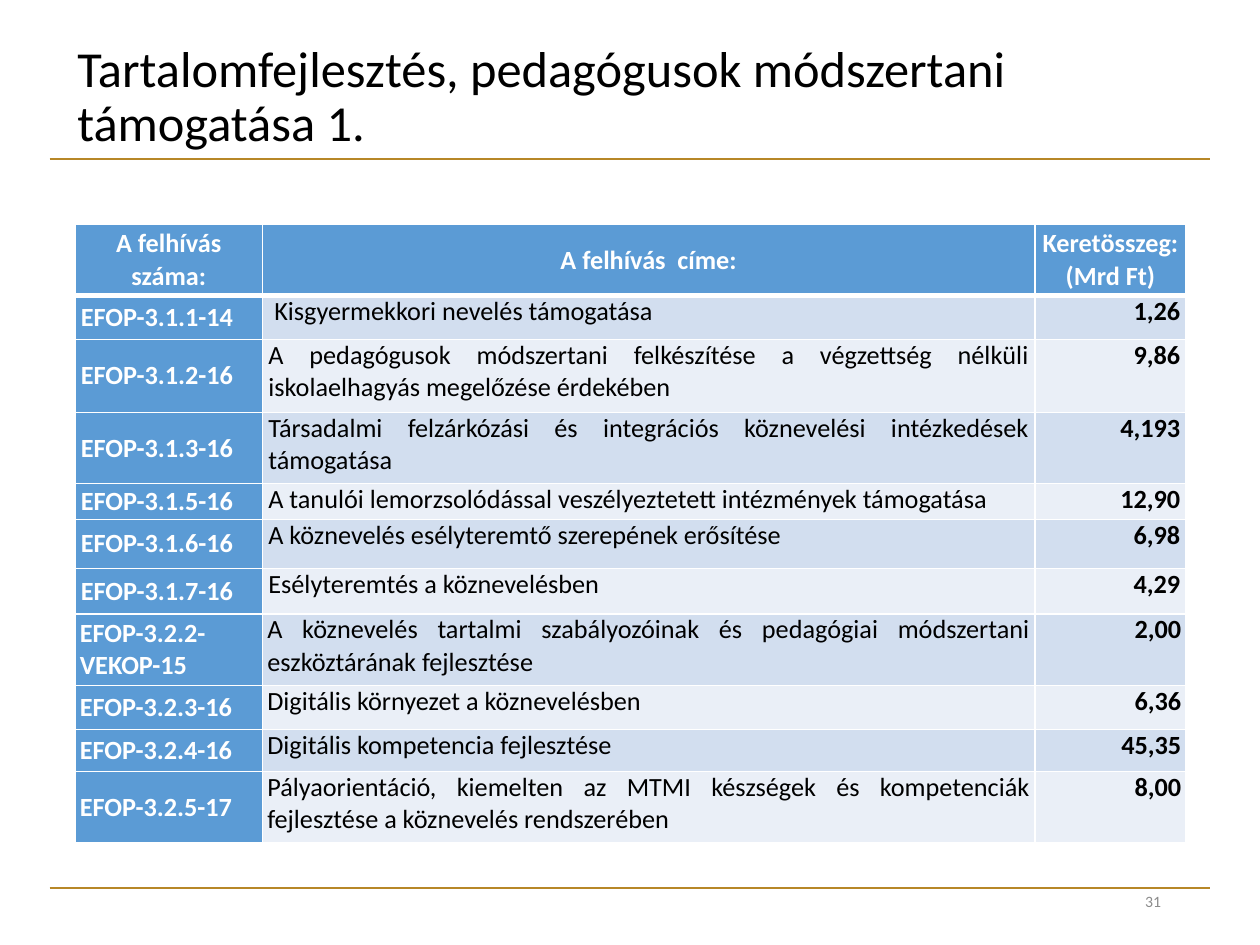
from dataclasses import dataclass

from lxml import etree
from pptx import Presentation
from pptx.dml.color import RGBColor
from pptx.enum.shapes import MSO_CONNECTOR
from pptx.enum.text import MSO_ANCHOR, MSO_AUTO_SIZE, PP_ALIGN
from pptx.oxml.ns import qn
from pptx.util import Pt

LEFT, CENTER, RIGHT, JUSTIFY = PP_ALIGN.LEFT, PP_ALIGN.CENTER, PP_ALIGN.RIGHT, PP_ALIGN.JUSTIFY
TOP, MIDDLE = MSO_ANCHOR.TOP, MSO_ANCHOR.MIDDLE


@dataclass(frozen=True)
class Theme:
    font: str = "Calibri"
    title_size: float = 28.8
    table_size: float = 15
    number_size: float = 9
    black: str = "000000"
    white: str = "FFFFFF"
    gray: str = "8C8C8C"
    gold: str = "B78727"
    blue: str = "5B9BD5"
    bands: tuple = ("D2DEEF", "EAEFF7")


THEME = Theme()

HEADINGS = ("A felhívás száma:", "A felhívás  címe:", "Keretösszeg:\v(Mrd Ft)")
# Call number, call title, budget, row height
CALLS = (
    ("EFOP-3.1.1-14", " Kisgyermekkori nevelés támogatása", "1,26", 25),
    ("EFOP-3.1.2-16", "A pedagógusok módszertani felkészítése a végzettség nélküli "
     "iskolaelhagyás megelőzése érdekében", "9,86", 42),
    ("EFOP-3.1.3-16", "Társadalmi felzárkózási és integrációs köznevelési "
     "intézkedések támogatása", "4,193", 40.5),
    ("EFOP-3.1.5-16", "A tanulói lemorzsolódással veszélyeztetett intézmények "
     "támogatása", "12,90", 20.5),
    ("EFOP-3.1.6-16", "A köznevelés esélyteremtő szerepének erősítése", "6,98", 28),
    ("EFOP-3.1.7-16", "Esélyteremtés a köznevelésben", "4,29", 26),
    ("EFOP-3.2.2-VEKOP-15", "A köznevelés tartalmi szabályozóinak és pedagógiai "
     "módszertani eszköztárának fejlesztése", "2,00", 41),
    ("EFOP-3.2.3-16", "Digitális környezet a köznevelésben", "6,36", 25),
    ("EFOP-3.2.4-16", "Digitális kompetencia fejlesztése", "45,35", 24),
    ("EFOP-3.2.5-17", "Pályaorientáció, kiemelten az MTMI készségek és kompetenciák "
     "fejlesztése a köznevelés rendszerében", "8,00", 41),
)
HEADER_HEIGHT = 40.5
COLUMN_WIDTHS = (107.2, 441.4, 86.4)
FIRST_NARROW_ROW = 7


def write(frame, text, size, color, align, bold=False):
    paragraph = frame.paragraphs[0]
    paragraph.text = text
    paragraph.alignment = align
    for name, value in {"name": THEME.font, "size": Pt(size), "bold": bold}.items():
        setattr(paragraph.font, name, value)
    paragraph.font.color.rgb = RGBColor.from_string(color)
    return paragraph


def fill_cell(cell, text, color, fill, align, anchor, bold, inset, bottom_line):
    """Write a table cell and give it its fill and white borders."""
    write(cell.text_frame, text, THEME.table_size, color, align, bold)
    layout = {"vertical_anchor": anchor, "margin_left": Pt(inset), "margin_right": Pt(inset),
              "margin_top": 0, "margin_bottom": 0}
    for name, value in layout.items():
        setattr(cell, name, value)
    properties = cell._tc.get_or_add_tcPr()
    for side, width in {"lnL": 1, "lnR": 1, "lnT": 1, "lnB": bottom_line}.items():
        border = etree.SubElement(properties, qn(f"a:{side}"), w=str(Pt(width)))
        solid = etree.SubElement(border, qn("a:solidFill"))
        etree.SubElement(solid, qn("a:srgbClr"), val=THEME.white)
    cell.fill.solid()
    cell.fill.fore_color.rgb = RGBColor.from_string(fill)


presentation = Presentation()
presentation.slide_width, presentation.slide_height = Pt(720), Pt(540)
slide = presentation.slides.add_slide(presentation.slide_layouts[5])

for rule_y in (90.7, 507.4):
    rule = slide.shapes.add_connector(MSO_CONNECTOR.STRAIGHT, Pt(28.4), Pt(rule_y),
                                      Pt(691.6), Pt(rule_y))
    rule.line.color.rgb = RGBColor.from_string(THEME.gold)
    rule.line.width = Pt(1)
    etree.SubElement(rule._element.spPr, qn("a:effectLst"))

title = slide.shapes.title
title.left, title.top, title.width, title.height = Pt(37), Pt(26), Pt(620.6), Pt(60)
title.text_frame.auto_size = MSO_AUTO_SIZE.NONE
title.text_frame.vertical_anchor = MIDDLE
heading = write(title.text_frame, "Tartalomfejlesztés, pedagógusok módszertani támogatása 1.",
                THEME.title_size, THEME.black, LEFT)
heading.line_spacing = 0.9

page_number = slide.shapes.add_textbox(Pt(508.5), Pt(500.5), Pt(162), Pt(28.8)).text_frame
page_number.word_wrap = True
page_number.vertical_anchor = MIDDLE
write(page_number, "31", THEME.number_size, THEME.gray, RIGHT)

row_heights = [HEADER_HEIGHT] + [call[-1] for call in CALLS]
calls_table = slide.shapes.add_table(len(row_heights), len(COLUMN_WIDTHS), Pt(42.8), Pt(128.4),
                                     Pt(sum(COLUMN_WIDTHS)), Pt(sum(row_heights))).table
for column, width in zip(calls_table.columns, COLUMN_WIDTHS):
    column.width = Pt(width)
for row, height in zip(calls_table.rows, row_heights):
    row.height = Pt(height)

for column_index, text in enumerate(HEADINGS):
    fill_cell(calls_table.cell(0, column_index), text, THEME.white, THEME.blue,
              CENTER, MIDDLE, True, 3.4, 3)

for row_index, (number, call_title, budget, _) in enumerate(CALLS, start=1):
    band = THEME.bands[(row_index - 1) % 2]
    inset = 2.8 if row_index >= FIRST_NARROW_ROW else 3.4
    columns = (
        (number, THEME.white, THEME.blue, JUSTIFY, MIDDLE, True),
        (call_title, THEME.black, band, JUSTIFY, TOP, False),
        (budget, THEME.black, band, RIGHT, TOP, True),
    )
    for column_index, content in enumerate(columns):
        fill_cell(calls_table.cell(row_index, column_index), *content, inset, 1)

presentation.save("out.pptx")
